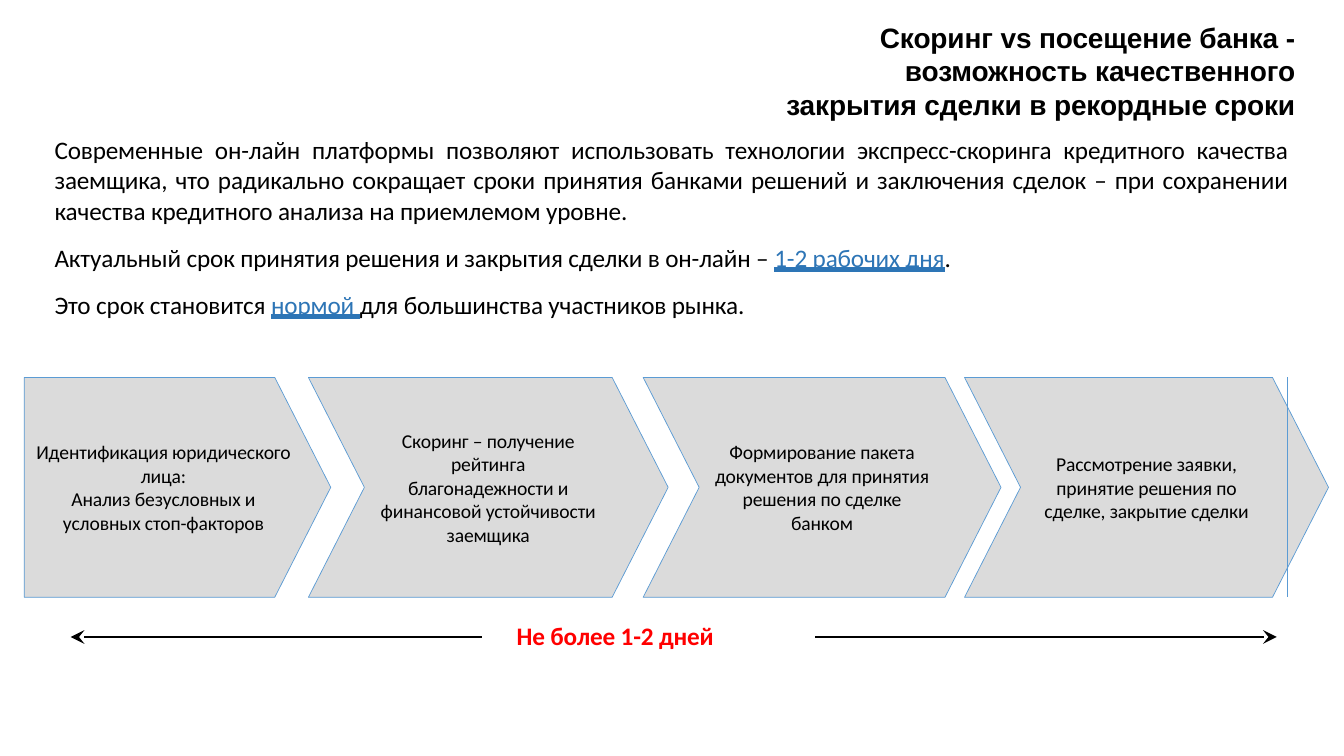
from lxml.etree import SubElement
from pptx import Presentation
from pptx.dml.color import RGBColor
from pptx.enum.shapes import MSO_CONNECTOR, MSO_SHAPE
from pptx.enum.text import MSO_ANCHOR, MSO_UNDERLINE, PP_ALIGN
from pptx.oxml.ns import qn
from pptx.util import Pt

BLACK, RED, ACCENT = "000000", "FF0000", "2D75B6"
STEP_FILL, STEP_LINE = "DBDBDB", "5B9BD4"
TIP = 40

TITLE = "Скоринг vs посещение банка -\vвозможность качественного\vзакрытия сделки в рекордные сроки"
BODY = [
    [("Современные он-лайн платформы позволяют использовать технологии "
      "экспресс-скоринга кредитного качества заемщика, что радикально сокращает "
      "сроки принятия банками решений и заключения сделок – при сохранении "
      "качества кредитного анализа на приемлемом уровне.", False)],
    [("Актуальный срок принятия решения и закрытия сделки в он-лайн – ", False),
     ("1-2 рабочих дня", True), (".", False)],
    [("Это срок становится ", False), ("нормой ", True),
     ("для большинства участников рынка.", False)],
]
STEPS = [
    (17.3, 219, ["Идентификация юридического", "лица:",
                 "Анализ безусловных и\vусловных стоп-факторов"]),
    (220.3, 257, ["Скоринг – получение\vрейтинга\vблагонадежности и\v"
                  "финансовой устойчивости\vзаемщика"]),
    (459.4, 255.6, ["Формирование пакета\vдокументов для принятия\vрешения по сделке\vбанком"]),
    (689, 260, ["Рассмотрение заявки,\vпринятие решения по\vсделке, закрытие сделки"]),
]


def color(value):
    return RGBColor.from_string(value)


def write(paragraph, text, size=18, font="Calibri", fill=BLACK, bold=False, underline=False):
    for index, line in enumerate(text.split("\v")):
        if index:
            paragraph.add_line_break()
        run = paragraph.add_run()
        run.text = line
        run.font.size = Pt(size)
        run.font.name = font
        run.font.bold = bold
        run.font.color.rgb = color(fill)
        if underline:
            run.font.underline = MSO_UNDERLINE.HEAVY_LINE
        run.font._element.set("spc", "-10")


def prepare_frame(shape, anchor=MSO_ANCHOR.TOP):
    frame = shape.text_frame
    frame.word_wrap = True
    frame.vertical_anchor = anchor
    frame.margin_left = frame.margin_right = frame.margin_top = frame.margin_bottom = 0
    return frame


def add_text_frame(slide, left, top, width, height):
    return prepare_frame(slide.shapes.add_textbox(Pt(left), Pt(top), Pt(width), Pt(height)))


def add_line(slide, start, end, fill, width, arrow=False):
    line = slide.shapes.add_connector(
        MSO_CONNECTOR.STRAIGHT, Pt(start[0]), Pt(start[1]), Pt(end[0]), Pt(end[1]))
    line.line.color.rgb = color(fill)
    line.line.width = Pt(width)
    if arrow:
        SubElement(line.line._get_or_add_ln(), qn("a:tailEnd"), type="stealth", w="lg", len="lg")
    SubElement(line._element.spPr, qn("a:effectLst"))


def add_title(slide, left, top, width, height):
    paragraph = add_text_frame(slide, left, top, width, height).paragraphs[0]
    paragraph.alignment = PP_ALIGN.RIGHT
    write(paragraph, TITLE, size=20, font="Arial", bold=True)


def add_body(slide, left, top, width, height):
    frame = add_text_frame(slide, left, top, width, height)
    for index, parts in enumerate(BODY):
        paragraph = frame.add_paragraph() if index else frame.paragraphs[0]
        paragraph.alignment = PP_ALIGN.JUSTIFY
        if index:
            paragraph.space_before = Pt(12)
        for text, marked in parts:
            write(paragraph, text, fill=ACCENT if marked else BLACK, underline=marked)


def add_step(slide, kind, left, top, width, height, lines):
    step = slide.shapes.add_shape(kind, Pt(left), Pt(top), Pt(width), Pt(height))
    step.shadow.inherit = False
    step.adjustments[0] = TIP / height
    step.fill.solid()
    step.fill.fore_color.rgb = color(STEP_FILL)
    step.line.color.rgb = color(STEP_LINE)
    step.line.width = Pt(0.5)
    frame = prepare_frame(step, MSO_ANCHOR.MIDDLE)
    for index, line in enumerate(lines):
        paragraph = frame.add_paragraph() if index else frame.paragraphs[0]
        paragraph.alignment = PP_ALIGN.CENTER
        write(paragraph, line, size=14)


def add_process(slide, top, height):
    for index, (left, width, lines) in enumerate(STEPS):
        kind = MSO_SHAPE.CHEVRON if index else MSO_SHAPE.PENTAGON
        add_step(slide, kind, left, top, width, height, lines)
    add_line(slide, (919.4, top), (919.4, top + height), STEP_LINE, 0.75)


def add_duration(slide, left, top, width, height):
    middle = top + height / 2
    add_line(slide, (left + 293.5, middle), (left, middle), BLACK, 1, arrow=True)
    add_line(slide, (left + width - 329.5, middle), (left + width, middle), BLACK, 1, arrow=True)
    frame = add_text_frame(slide, left + 318.5, top, 145, height)
    write(frame.paragraphs[0], "Не более 1-2 дней", fill=RED, bold=True)


def main():
    presentation = Presentation()
    presentation.slide_width, presentation.slide_height = Pt(960), Pt(540)
    slide = presentation.slides.add_slide(presentation.slide_layouts[6])
    add_title(slide, 543.5, 14.4, 381.5, 72)
    add_body(slide, 39, 96, 881, 132)
    add_process(slide, 269.6, 157)
    add_duration(slide, 50.5, 443, 861.5, 24)
    presentation.save("out.pptx")


if __name__ == "__main__":
    main()
